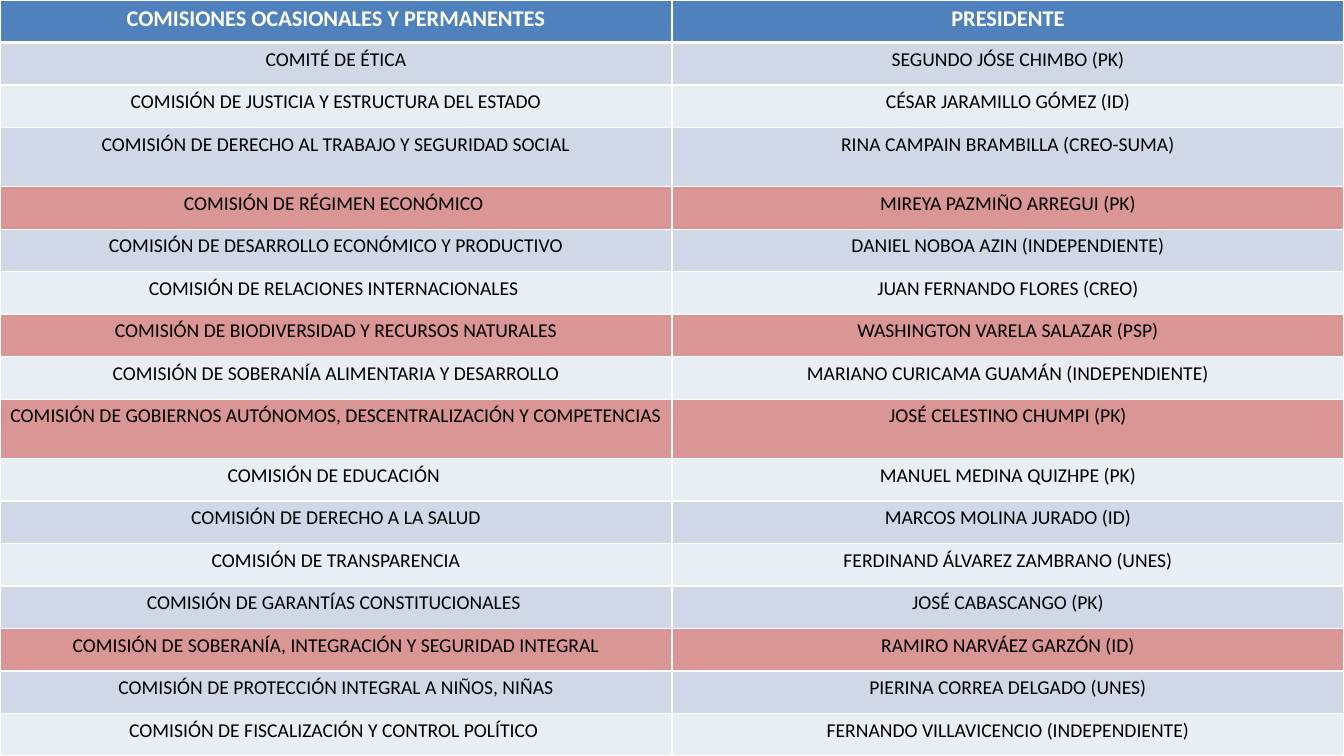
from pptx import Presentation
from pptx.dml.color import RGBColor as Rgb
from pptx.enum.text import PP_ALIGN as Align
from pptx.oxml import parse_xml as to_xml
from pptx.oxml.ns import nsdecls
from pptx.util import Inches, Pt

HUES = {"head": "4F81BD", "odd": "D0D8E8", "even": "E9EDF4",
        "mark": "D99694", "line": "FFFFFF", "ink": "000000"}
HEAD = ("COMISIONES OCASIONALES Y PERMANENTES", "PRESIDENTE")
BODY = [
    ("COMITÉ DE ÉTICA", "SEGUNDO JÓSE CHIMBO (PK)"),
    ("COMISIÓN DE JUSTICIA Y ESTRUCTURA DEL ESTADO", "CÉSAR JARAMILLO GÓMEZ (ID)"),
    ("COMISIÓN DE DERECHO AL TRABAJO Y SEGURIDAD SOCIAL", "RINA CAMPAIN BRAMBILLA (CREO-SUMA)"),
    ("COMISIÓN DE RÉGIMEN ECONÓMICO ", "MIREYA PAZMIÑO ARREGUI (PK)"),
    ("COMISIÓN DE DESARROLLO ECONÓMICO Y PRODUCTIVO", "DANIEL NOBOA AZIN (INDEPENDIENTE)"),
    ("COMISIÓN DE RELACIONES INTERNACIONALES ", "JUAN FERNANDO FLORES (CREO)"),
    ("COMISIÓN DE BIODIVERSIDAD Y RECURSOS NATURALES", "WASHINGTON VARELA SALAZAR (PSP)"),
    ("COMISIÓN DE SOBERANÍA ALIMENTARIA Y DESARROLLO", "MARIANO CURICAMA GUAMÁN (INDEPENDIENTE)"),
    ("COMISIÓN DE GOBIERNOS AUTÓNOMOS, DESCENTRALIZACIÓN Y COMPETENCIAS", "JOSÉ CELESTINO CHUMPI (PK)"),
    ("COMISIÓN DE EDUCACIÓN ", "MANUEL MEDINA QUIZHPE (PK)"),
    ("COMISIÓN DE DERECHO A LA SALUD", "MARCOS MOLINA JURADO (ID)"),
    ("COMISIÓN DE TRANSPARENCIA", "FERDINAND ÁLVAREZ ZAMBRANO (UNES)"),
    ("COMISIÓN DE GARANTÍAS CONSTITUCIONALES ", "JOSÉ CABASCANGO (PK)"),
    ("COMISIÓN DE SOBERANÍA, INTEGRACIÓN Y SEGURIDAD INTEGRAL", "RAMIRO NARVÁEZ GARZÓN (ID)"),
    ("COMISIÓN DE PROTECCIÓN INTEGRAL A NIÑOS, NIÑAS", "PIERINA CORREA DELGADO (UNES)"),
    ("COMISIÓN DE FISCALIZACIÓN Y CONTROL POLÍTICO ", "FERNANDO VILLAVICENCIO (INDEPENDIENTE)"),
]
TALL = {3, 9}
MARKED = {4, 7, 9, 14}
STRETCH = 1.4


def write(frame, text, size=14, hue="ink", bold=False):
    par = frame.paragraphs[0]
    par.alignment = Align.CENTER
    run = par.add_run()
    run.text = text
    font = run.font
    font.name, font.size, font.bold = "Calibri", Pt(size), bold
    font.color.rgb = Rgb.from_string(HUES[hue])


def border(cell, top=1, bottom=1):
    props = cell._tc.get_or_add_tcPr()
    sides = {"L": 1, "R": 1, "T": top, "B": bottom}
    for spot, (side, width) in enumerate(sides.items()):
        props.insert(spot, to_xml(
            f'<a:ln{side} {nsdecls("a")} w="{Pt(width)}"><a:solidFill>'
            f'<a:srgbClr val="{HUES["line"]}"/></a:solidFill></a:ln{side}>'))


def tone(row):
    if row == 0:
        return "head"
    if row in MARKED:
        return "mark"
    return "odd" if row % 2 else "even"


def roster(slide, left, top, width, height):
    lines = [HEAD, *BODY]
    table = slide.shapes.add_table(len(lines), len(HEAD), left, top, width, height).table
    shares = [STRETCH if row in TALL else 1 for row in range(len(lines))]
    for col in table.columns:
        col.width = int(width / len(HEAD))
    for row, line in enumerate(lines):
        table.rows[row].height = int(height * shares[row] / sum(shares))
        style = {"size": 16, "hue": "line", "bold": True} if row == 0 else {}
        for col, text in enumerate(line):
            cell = table.cell(row, col)
            cell.fill.solid()
            cell.fill.fore_color.rgb = Rgb.from_string(HUES[tone(row)])
            border(cell, top=3 if row == 1 else 1, bottom=3 if row == 0 else 1)
            write(cell.text_frame, text, **style)


def main():
    deck = Presentation()
    deck.slide_width, deck.slide_height = Inches(40 / 3), Inches(7.5)
    slide = deck.slides.add_slide(deck.slide_layouts[6])
    roster(slide, 0, 0, deck.slide_width, deck.slide_height)
    deck.save("out.pptx")


if __name__ == "__main__":
    main()
